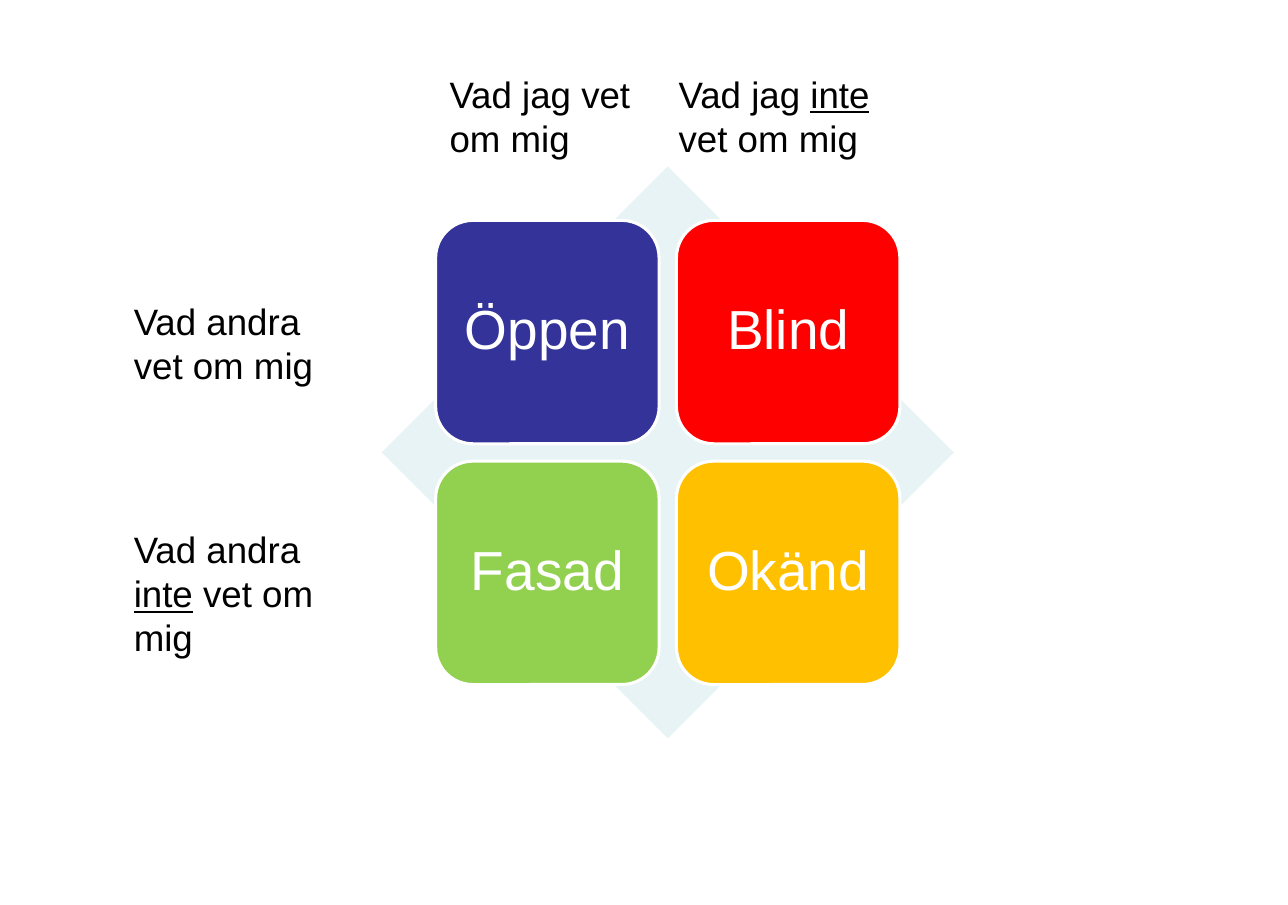
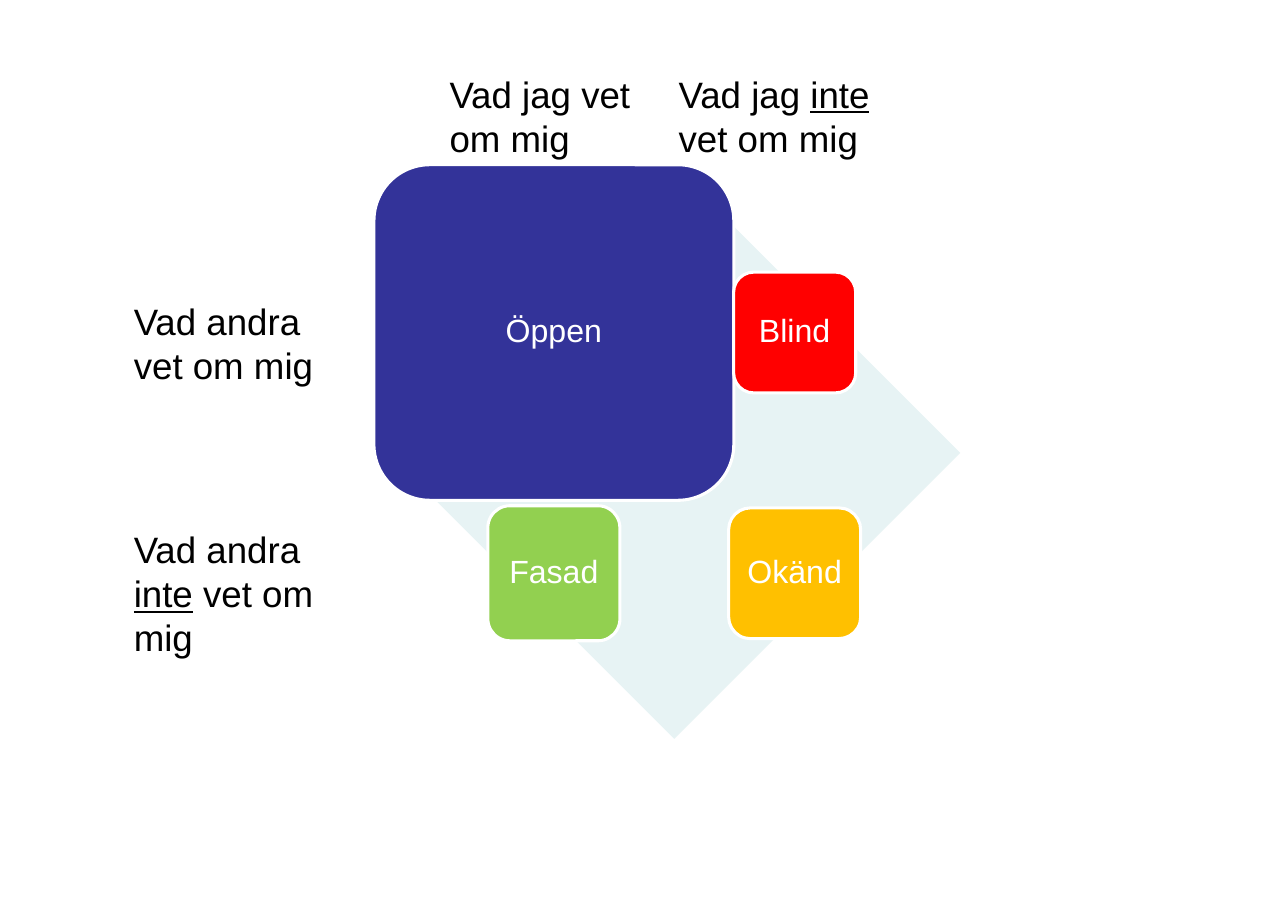
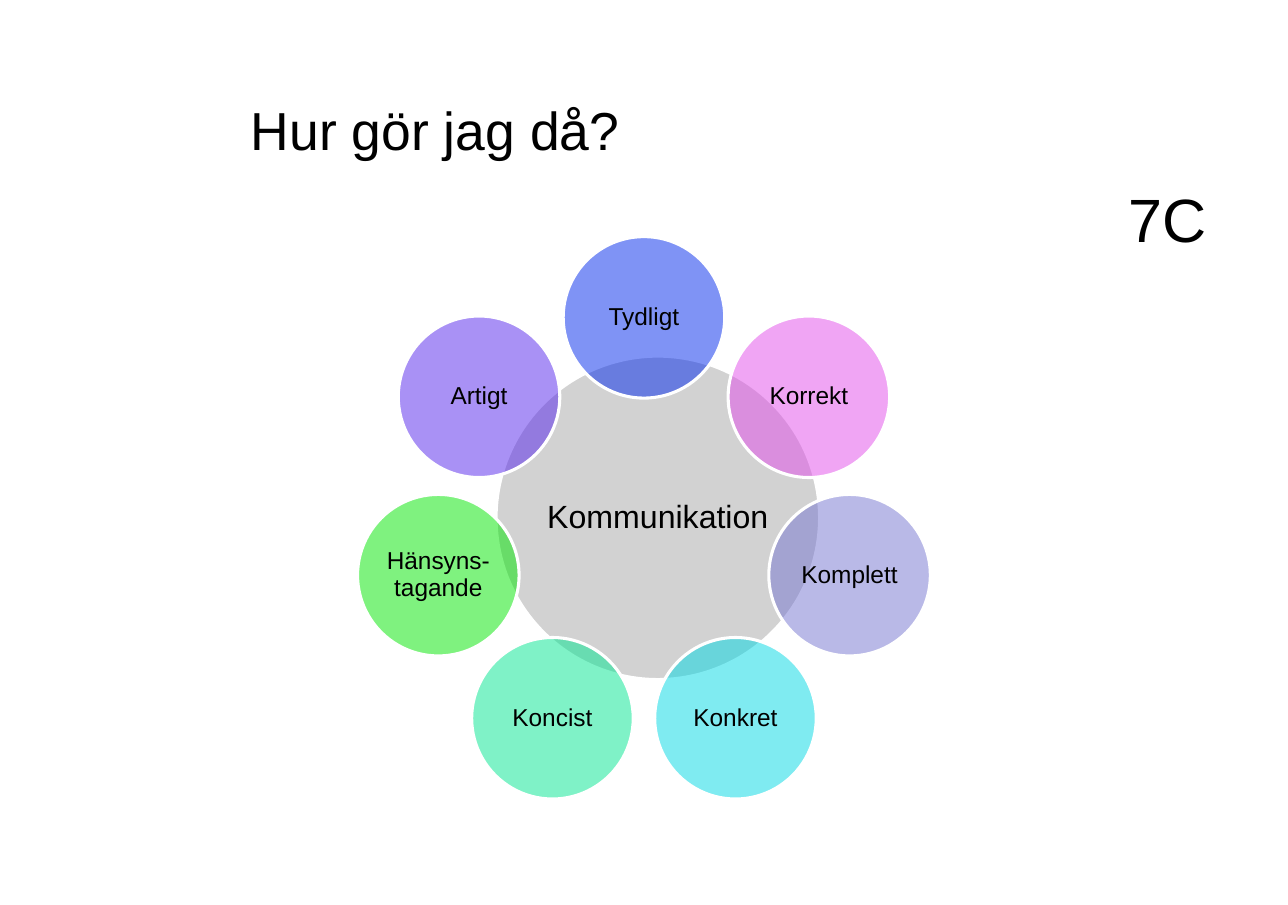
from math import cos, pi, sin

from lxml import etree
from pptx import Presentation
from pptx.dml.color import RGBColor
from pptx.enum.shapes import MSO_SHAPE
from pptx.enum.text import MSO_ANCHOR, MSO_AUTO_SIZE, PP_ALIGN
from pptx.oxml.ns import qn
from pptx.util import Cm, Pt

DIAMOND, ROUNDED, OVAL = MSO_SHAPE.DIAMOND, MSO_SHAPE.ROUNDED_RECTANGLE, MSO_SHAPE.OVAL
LEFT, CENTER = PP_ALIGN.LEFT, PP_ALIGN.CENTER
TOP, MIDDLE = MSO_ANCHOR.TOP, MSO_ANCHOR.MIDDLE
NO_AUTOFIT = MSO_AUTO_SIZE.NONE
FONT = "Arial"
COLORS = {
    "text": "000000", "white": "FFFFFF", "diamond": "E7F3F4", "hub": "A6A6A6",
    "open": "333399", "blind": "FF0000", "facade": "92D050", "unknown": "FFC000",
    "clear": "0028EC", "correct": "E24CEA", "complete": "7575D1", "concrete": "00D8E5",
    "concise": "00E791", "considerate": "00E600", "courteous": "5524EC",
}


def write(shape, text, size, color="text", align=LEFT, anchor=TOP,
          margins=(0.25, 0.13), spacing=1.0):
    """Fill a shape with one paragraph; words between underscores are underlined."""
    frame = shape.text_frame
    frame.word_wrap = True
    frame.auto_size = NO_AUTOFIT
    frame.vertical_anchor = anchor
    frame.margin_left = frame.margin_right = Cm(margins[0])
    frame.margin_top = frame.margin_bottom = Cm(margins[1])
    para = frame.paragraphs[0]
    para.alignment = align
    para.line_spacing = spacing
    for index, part in enumerate(text.split("_")):
        span = para.add_run()
        span.text = part
        span.font.name = FONT
        span.font.size = Pt(size)
        span.font.color.rgb = RGBColor.from_string(COLORS[color])
        span.font.underline = index % 2 == 1


def add_centered(page, kind, center, size, fill, outlined=True, opacity=100):
    """Draw a filled shape around its centre point, in centimetres."""
    (x, y), (width, height) = center, size
    shape = page.shapes.add_shape(
        kind, Cm(x - width / 2), Cm(y - height / 2), Cm(width), Cm(height))
    shape.shadow.inherit = False
    shape.fill.solid()
    shape.fill.fore_color.rgb = RGBColor.from_string(COLORS[fill])
    if opacity < 100:
        color = shape.fill._xPr.find(qn("a:solidFill"))[0]
        etree.SubElement(color, qn("a:alpha")).set("val", str(opacity * 1000))
    if outlined:
        shape.line.color.rgb = RGBColor.from_string(COLORS["white"])
        shape.line.width = Pt(2)
    else:
        shape.line.fill.background()
    return shape


deck = Presentation()
deck.slide_width, deck.slide_height = Cm(29.74), Cm(20.9)
title_only, blank = deck.slide_layouts[5], deck.slide_layouts[6]

# Two windows: equal panes, then a large open pane
PANES = [("Öppen", "open"), ("Blind", "blind"), ("Fasad", "facade"), ("Okänd", "unknown")]
LABELS = [
    ("Vad andra vet om mig", 2.84, 6.78, 2.31),
    ("Vad andra _inte_ vet om mig", 2.84, 12.04, 3.33),
    ("Vad jag vet om mig", 10.13, 1.52, 2.31),
    ("Vad jag _inte_ vet om mig", 15.42, 1.52, 2.31),
]
PANE_OFFSET = 2.78
WINDOWS = [
    {"center": (15.42, 10.45), "font": 36, "margin": 0.35, "sizes": [(5.16, 5.16)] * 4},
    {"center": (15.57, 10.46), "font": 21, "margin": 0.2,
     "sizes": [(8.31, 7.75), (2.82, 2.79), (3.05, 3.12), (3.05, 3.02)]},
]
for window in WINDOWS:
    page = deck.slides.add_slide(blank)
    x, y = window["center"]
    add_centered(page, DIAMOND, (x, y), (13.21, 13.21), "diamond", outlined=False)
    for index, ((name, fill), size) in enumerate(zip(PANES, window["sizes"])):
        row, column = divmod(index, 2)
        center = (x + (2 * column - 1) * PANE_OFFSET, y + (2 * row - 1) * PANE_OFFSET)
        pane = add_centered(page, ROUNDED, center, size, fill)
        write(pane, name, window["font"], color="white", align=CENTER, anchor=MIDDLE,
              margins=(window["margin"], window["margin"]), spacing=0.9)
    for text, left, top, height in LABELS:
        box = page.shapes.add_textbox(Cm(left), Cm(top), Cm(5.28), Cm(height))
        write(box, text, 24)

# Seven qualities in a ring around the hub
QUALITIES = [
    ("Tydligt", "clear"), ("Korrekt", "correct"), ("Komplett", "complete"),
    ("Konkret", "concrete"), ("Koncist", "concise"),
    ("Hänsyns-tagande", "considerate"), ("Artigt", "courteous"),
]
RING_X, RING_Y, RING_RADIUS = 14.87, 12.2, 4.87
page = deck.slides.add_slide(title_only)
title = page.shapes.title
title.left, title.top, title.width, title.height = Cm(5.51), Cm(0.84), Cm(23.11), Cm(4.47)
write(title, "Hur gör jag då?", 35, anchor=MIDDLE, margins=(0.28, 0.15), spacing=0.9)

hub = add_centered(page, OVAL, (15.19, 11.96), (7.47, 7.47), "hub", opacity=50)
write(hub, "Kommunikation", 21, align=CENTER, anchor=MIDDLE, margins=(0.08, 0.08), spacing=0.9)
for index, (name, fill) in enumerate(QUALITIES):
    angle = 2 * pi * index / len(QUALITIES)
    center = (RING_X + RING_RADIUS * sin(angle), RING_Y - RING_RADIUS * cos(angle))
    circle = add_centered(page, OVAL, center, (3.73, 3.73), fill, opacity=50)
    write(circle, name, 16, align=CENTER, anchor=MIDDLE, margins=(0.05, 0.05), spacing=0.9)

box = page.shapes.add_textbox(Cm(25.81), Cm(4.06), Cm(2.46), Cm(1.96))
write(box, "7C", 40)

deck.save("out.pptx")
